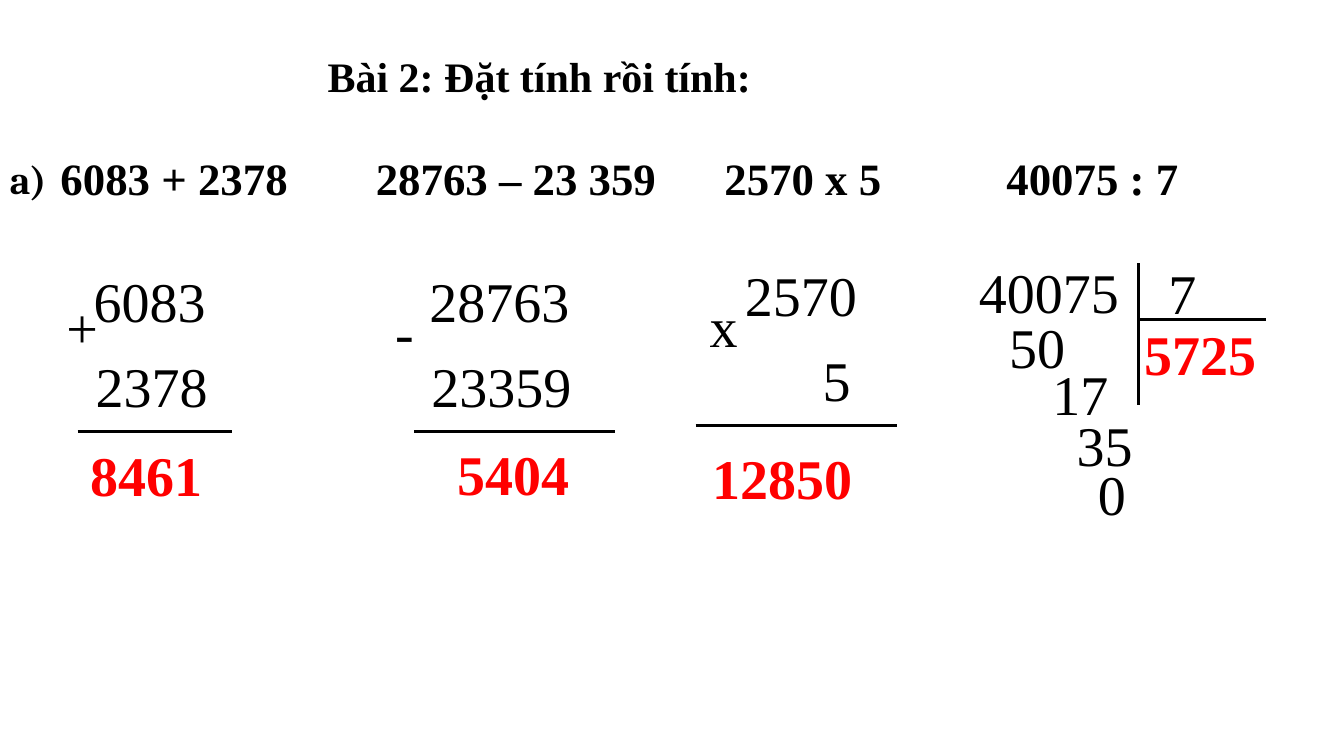
from pptx import Presentation
from pptx.dml.color import RGBColor
from pptx.enum.shapes import MSO_CONNECTOR
from pptx.enum.text import MSO_ANCHOR, PP_ALIGN
from pptx.oxml.ns import qn
from pptx.util import Inches, Pt
from lxml import etree

LINE = MSO_CONNECTOR.STRAIGHT
TOP = MSO_ANCHOR.TOP
LEFT = PP_ALIGN.LEFT
BLACK, RED = "000000", "FF0000"
SERIF = "Times New Roman"
PAD = 0.1


def color(code):
    """Turn a hex string into a colour."""
    return RGBColor.from_string(code)


def write(frame, text, size=40, bold=False, ink=BLACK, font=SERIF):
    """Put formatted text in a frame."""
    para = frame.paragraphs[0]
    para.alignment = LEFT
    run = para.add_run()
    run.text = text
    run.font.name = font
    run.font.size = Pt(size)
    run.font.bold = bold
    run.font.color.rgb = color(ink)


class Board:
    """Hold the slide and draw its elements."""

    def __init__(self, deck):
        """Add a title-only slide."""
        self.slide = deck.slides.add_slide(deck.slide_layouts[5])

    def place(self, shape, box):
        """Set the place of a shape."""
        shape.left, shape.top, shape.width, shape.height = map(Inches, box)

    def title(self, text, box):
        """Move and fill the title."""
        shape = self.slide.shapes.title
        self.place(shape, box)
        shape.text_frame.vertical_anchor = TOP
        shape.text_frame.word_wrap = True
        write(shape.text_frame, text, size=30, bold=True)

    def text(self, text, x, y, width=1.8, height=0.77, **style):
        """Add a text box."""
        shape = self.slide.shapes.add_textbox(*map(Inches, (x, y, width, height)))
        shape.text_frame.word_wrap = True
        write(shape.text_frame, text, **style)

    def line(self, x1, y1, x2, y2):
        """Add a black rule."""
        rule = self.slide.shapes.add_connector(LINE, *map(Inches, (x1, y1, x2, y2)))
        rule.line.color.rgb = color(BLACK)
        rule.line.width = Pt(2.25)
        etree.SubElement(rule._element.spPr, qn("a:effectLst"))

    def table(self, items, box):
        """Add a one-row table without fills."""
        grid = self.slide.shapes.add_table(1, len(items), *map(Inches, box)).table
        grid.first_row = grid.horz_banding = False
        for cell, (text, shift) in zip(grid.iter_cells(), items):
            cell.fill.background()
            cell.margin_left = Inches(PAD + shift)
            write(cell.text_frame, text, size=32, bold=True)

    def sum(self, sign, terms, answer, rule):
        """Draw a column sum with its sign, terms, rule and answer."""
        self.text(*sign, width=0.68)
        for term in terms:
            self.text(*term)
        start, end, y = rule
        self.line(start, y, end, y)
        self.text(*answer, bold=True, ink=RED)


def main():
    """Build the slide."""
    deck = Presentation()
    deck.slide_width, deck.slide_height = Inches(13.33), Inches(7.5)
    board = Board(deck)
    board.title("Bài 2: Đặt tính rồi tính:", (3.15, 0.45, 5.74, 0.61))
    board.table(
        [("6083 + 2378", 0), ("28763 – 23 359", 0), ("2570 x 5", 0.33), ("40075 : 7", 0)],
        (0.5, 1.49, 12.51, 0.9))
    board.text("a)", 0, 1.49, 1, 0.57, size=28, bold=True, font="Cambria")

    board.sum(("+", 0.56, 2.85), [("6083", 0.83, 2.59), ("2378", 0.85, 3.44)],
              ("8461", 0.8, 4.32), (0.77, 2.3, 4.28))
    board.sum(("-", 3.82, 2.9), [("28763", 4.16, 2.59), ("23359", 4.18, 3.44)],
              ("5404", 4.44, 4.31), (4.11, 6.1, 4.28))
    board.sum(("x", 6.94, 2.84), [("2570", 7.29, 2.54), ("5", 8.06, 3.38)],
              ("12850", 6.97, 4.35), (6.9, 8.9, 4.22))

    board.text("40075", 9.61, 2.51)
    board.text("7", 11.49, 2.52, 0.76)
    board.line(11.29, 2.61, 11.29, 4.02)
    board.line(11.29, 3.17, 12.56, 3.17)
    rests = [("50", 9.91, 3.05), ("17", 10.34, 3.52), ("35", 10.58, 4.02), ("0", 10.79, 4.51)]
    for rest in rests:
        board.text(*rest, width=0.89)
    board.text("5725", 11.25, 3.12, 1.47, bold=True, ink=RED)
    deck.save("out.pptx")


if __name__ == "__main__":
    main()
